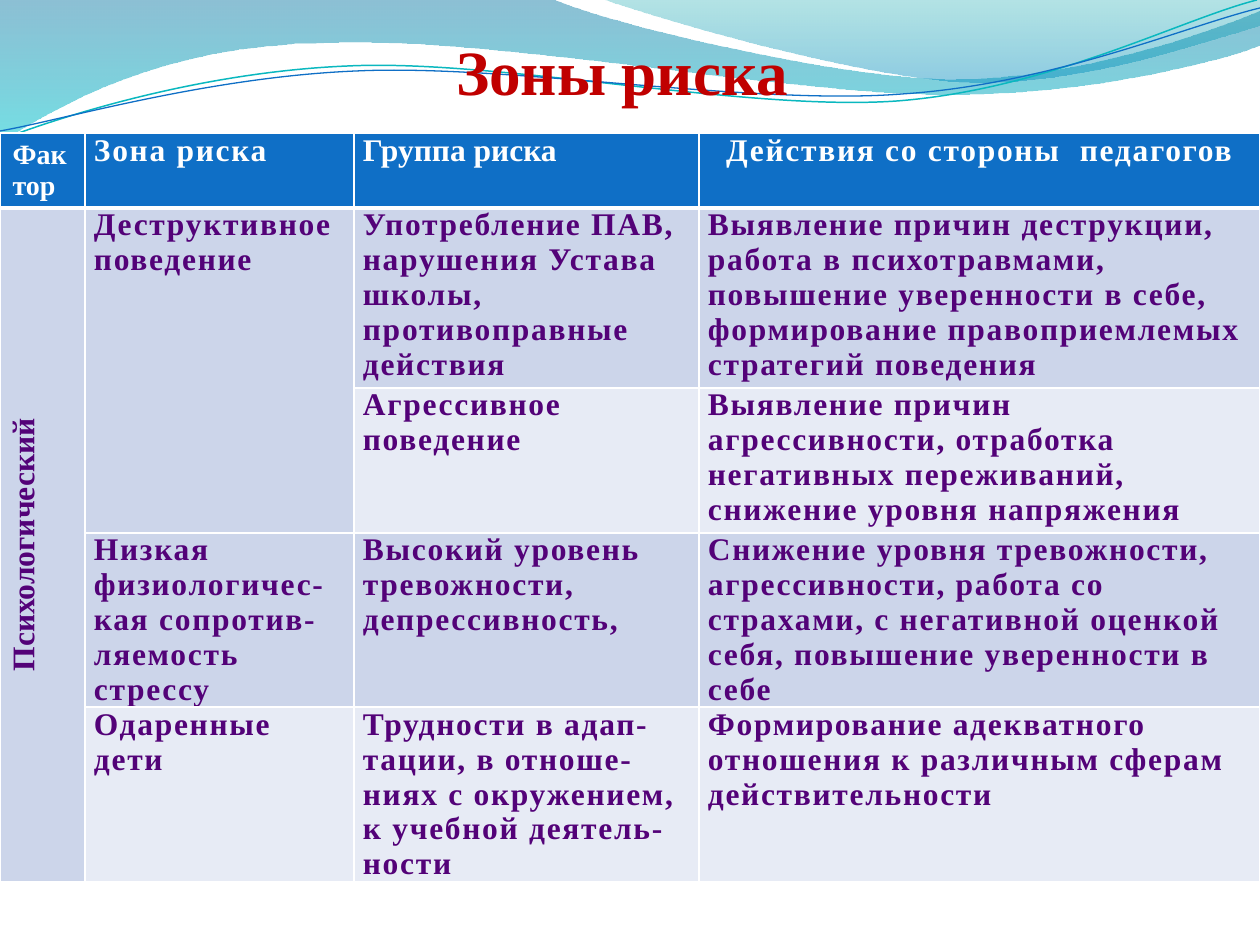
"""Builds a slide with a table of risk zones under a wavy header."""
from lxml.etree import SubElement as Sub
from pptx import Presentation as Deck
from pptx.dml.color import RGBColor as Rgb
from pptx.enum.text import MSO_ANCHOR as Anchor, MSO_AUTO_SIZE as Auto, PP_ALIGN as Align
from pptx.oxml.ns import qn
from pptx.util import Emu, Pt

PX = 914400 / 126
FONT = "Times New Roman"
HUE = {
    "title": "C00000", "head": "0F6FC6", "text": "530278", "white": "FFFFFF",
    "dark": "CCD5EA", "pale": "E7EBF5", "teal": "0AB8BF", "blue": "0F6FC6",
    "sea": "0074A1", "aqua": "00C6CF", "mint": "00A1A9", "sky": "008BBF",
}
WAVES = [
    ([(0, 0), (554, 0), (600, 21, 837, 79, 955, 79), (1074, 79, 1207, 33, 1260, 11),
      (1260, 45), (1239, 55, 1096, 96, 940, 94), (783, 94, 481, 35, 324, 43),
      (163, 45, 58, 105, 0, 142)], [("sea", 45), ("aqua", 55)]),
    ([(604, 0), (642, 14, 859, 78, 969, 82), (1079, 86, 1211, 40, 1260, 26),
      (1260, 0)], [("mint", 30), ("sky", 45)]),
]
LINES = [
    ([(0, 140), (60, 117, 199, 72, 349, 66), (498, 59, 747, 112, 898, 101),
      (1050, 89, 1182, 19, 1257, 0)], "teal", 0.85),
    ([(0, 131), (59, 121, 207, 77, 357, 71), (508, 64, 752, 106, 903, 94),
      (1053, 84, 1186, 26, 1260, 8)], "blue", 0.75),
]
COLS = [85, 269, 345, 561]
ROWS = [58, 180, 145, 110, 155]
BANDS = ["head", "dark", "pale", "dark", "pale"]
CELLS = [
    ["Фактор", "Зона риска", "Группа риска", "Действия со стороны  педагогов"],
    ["Психологический", "Деструктивное поведение",
     "Употребление ПАВ,\nнарушения Устава школы, противоправные действия",
     "Выявление причин деструкции, работа в психотравмами, повышение уверенности "
     "в себе, формирование правоприемлемых стратегий поведения"],
    ["", "", "Агрессивное поведение",
     "Выявление причин агрессивности, отработка негативных переживаний, "
     "снижение уровня напряжения"],
    ["", "Низкая физиологичес-кая сопротив-ляемость стрессу",
     "Высокий уровень тревожности,  депрессивность,",
     "Снижение уровня тревожности, агрессивности, работа со страхами, "
     "с негативной оценкой себя, повышение уверенности в себе"],
    ["", "Одаренные дети",
     "Трудности в адап-тации, в отноше-ниях с окружением, к учебной деятель-ности",
     "Формирование адекватного отношения к различным сферам действительности"],
]


def px(num):
    """Turn px into EMU."""
    return Emu(round(num * PX))


def rgb(name):
    """Look up a named colour."""
    return Rgb.from_string(HUE[name])


def write(frame, text, size=18, hue="text", align=Align.LEFT, gap=0):
    """Fill a text frame with bold paragraphs, one per line of text."""
    for num, line in enumerate(text.split("\n")):
        para = frame.add_paragraph() if num else frame.paragraphs[0]
        para.alignment = align
        run = para.add_run()
        run.text = line
        font = run.font
        font.name, font.size, font.bold = FONT, Pt(size), True
        font.color.rgb = rgb(hue)
        if gap:
            run._r.get_or_add_rPr().set("spc", str(gap * 100))


def draw(slide, steps, left, top, close):
    """Add a freeform of straight steps (2 numbers) and cubic ones (6)."""
    pts = [(px(left + step[i]), px(top + step[i + 1]))
           for step in steps for i in range(0, len(step), 2)]
    pen = slide.shapes.build_freeform(*pts[0])
    pen.add_line_segments(pts[1:], close=close)
    shape = pen.convert_to_shape()
    shape.shadow.inherit = False
    legs = iter(list(shape.element.iter(qn("a:lnTo"))))
    for step in steps[1:]:
        leg = next(legs)
        if len(step) == 6:
            leg.tag = qn("a:cubicBezTo")
            for _ in range(2):
                spare = next(legs)
                leg.append(spare[0])
                spare.getparent().remove(spare)
    return shape


def add_waves(slide, left, top):
    """Draw the shaded waves and the thin lines over them."""
    for steps, tones in WAVES:
        shape = draw(slide, steps, left, top, True)
        shape.line.fill.background()
        shape.fill.gradient()
        shape.fill.gradient_angle = 270
        for pos, (stop, (hue, alpha)) in enumerate(zip(shape.fill.gradient_stops, tones)):
            stop.position = pos
            stop.color.rgb = rgb(hue)
            tone = stop._gs.find(qn("a:srgbClr"))
            Sub(tone, qn("a:alpha"), val=str(alpha * 1000))
    for steps, hue, width in LINES:
        shape = draw(slide, steps, left, top, False)
        shape.fill.background()
        shape.line.color.rgb = rgb(hue)
        shape.line.width = Pt(width)


def add_title(slide, left, top, width, height):
    """Place the title in front of the waves."""
    title = slide.shapes.title
    title.left, title.top, title.width, title.height = map(px, (left, top, width, height))
    frame = title.text_frame
    frame.auto_size, frame.word_wrap = Auto.NONE, True
    frame.vertical_anchor = Anchor.BOTTOM
    frame.margin_left = frame.margin_right = frame.margin_bottom = 0
    write(frame, "Зоны риска ", size=36, hue="title", align=Align.CENTER)
    title.element.getparent().append(title.element)


def edge(cell, base):
    """Give a cell white borders, with its own width at the base."""
    props = cell._tc.get_or_add_tcPr()
    for side, width in (("L", 1), ("R", 1), ("T", 1), ("B", base)):
        line = Sub(props, qn("a:ln" + side), w=str(Pt(width)))
        fill = Sub(line, qn("a:solidFill"))
        Sub(fill, qn("a:srgbClr"), val=HUE["white"])


def add_grid(slide, left, top, width, height):
    """Place the table of factors, zones, groups and actions."""
    box = map(px, (left, top, width, height))
    holder = slide.shapes.add_table(len(ROWS), len(COLS), *box)
    grid = holder.table
    for col, size in zip(grid.columns, COLS):
        col.width = px(size)
    for row, size in zip(grid.rows, ROWS):
        row.height = px(size)
    holder.height = px(height)
    for r, texts in enumerate(CELLS):
        for c, text in enumerate(texts):
            cell = grid.cell(r, c)
            edge(cell, 1 if r else 3)
            cell.fill.solid()
            cell.fill.fore_color.rgb = rgb(BANDS[r] if text else "dark")
            if c:
                cell.margin_left = cell.margin_right = px(9)
                cell.margin_top = cell.margin_bottom = 0
            if text:
                mid = (r, c) in ((0, 3), (1, 0))
                write(cell.text_frame, text, size=18 if r or c else 16,
                      hue="text" if r else "white",
                      align=Align.CENTER if mid else Align.LEFT,
                      gap=0 if c == 0 or (r, c) == (0, 2) else 1)
    grid.cell(1, 0).merge(grid.cell(4, 0))
    grid.cell(1, 1).merge(grid.cell(2, 1))
    grid.cell(1, 0)._tc.get_or_add_tcPr().set("vert", "vert270")


def main():
    """Build and save the slide."""
    deck = Deck()
    deck.slide_width, deck.slide_height = px(1260), px(945)
    slide = deck.slides.add_slide(deck.slide_layouts[5])
    add_waves(slide, 0, 0)
    add_title(slide, 0, 0, 1260, 108)
    add_grid(slide, 0, 133, 1260, 798)
    deck.save("out.pptx")


if __name__ == "__main__":
    main()
